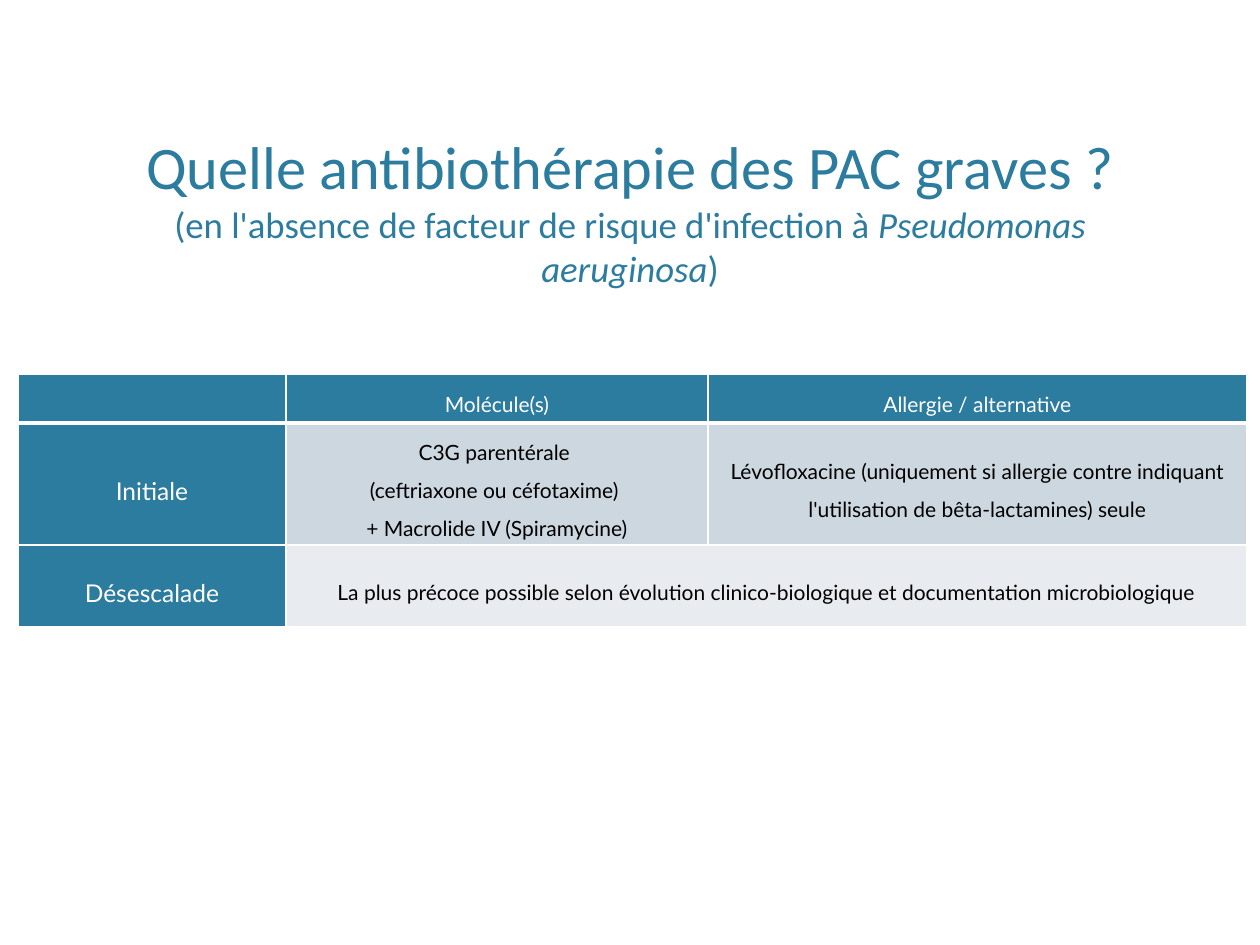
from dataclasses import dataclass

from lxml import etree
from pptx import Presentation
from pptx.dml.color import RGBColor
from pptx.enum import text
from pptx.oxml import ns
from pptx.util import Emu, Pt

PX = 914400 // 126


@dataclass(frozen=True)
class Theme:
    teal: str = "2C7C9F"
    white: str = "FFFFFF"
    black: str = "000000"
    band_dark: str = "CDD7DF"
    band_light: str = "E8ECF0"
    title_font: str = "Calibri"
    table_font: str = "Lato"
    title_size: float = 34.5
    subtitle_size: float = 21
    label_size: float = 14
    body_size: float = 12
    border: float = 1
    header_border: float = 3


THEME = Theme()

COLUMN_WIDTHS = (268, 422, 539)
ROW_HEIGHTS = (49, 122, 82)
ROW_FILLS = (THEME.teal, THEME.band_dark, THEME.band_light)
CELL_LINES = (
    ((), ("Molécule(s)",), ("Allergie / alternative",)),
    (
        ("Initiale",),
        ("C3G parentérale ", "(ceftriaxone ou céfotaxime) ", "+ Macrolide IV (Spiramycine)"),
        ("Lévofloxacine (uniquement si allergie contre indiquant l'utilisation de bêta-lactamines) seule",),
    ),
    (
        ("Désescalade",),
        ("La plus précoce possible selon évolution clinico-biologique et documentation microbiologique",),
        (),
    ),
)


def px(length):
    return Emu(length * PX)


def style_font(font, name, size, color):
    font.name = name
    font.size = Pt(size)
    font.color.rgb = RGBColor.from_string(color)


def add_title(slide):
    shape = slide.shapes.add_textbox(px(76), px(158), px(1108), px(138))
    frame = shape.text_frame
    frame.word_wrap = True
    frame.vertical_anchor = text.MSO_ANCHOR.BOTTOM
    frame.margin_left = frame.margin_right = px(14)
    paragraph = frame.paragraphs[0]
    paragraph.alignment = text.PP_ALIGN.CENTER

    def add_run(words, size, italic=False):
        run = paragraph.add_run()
        run.text = words
        style_font(run.font, THEME.title_font, size, THEME.teal)
        run.font.italic = italic

    add_run("Quelle antibiothérapie des PAC graves ?", THEME.title_size)
    paragraph.add_line_break()
    add_run("(en l'absence de facteur de risque d'infection à ", THEME.subtitle_size)
    add_run("Pseudomonas aeruginosa", THEME.subtitle_size, italic=True)
    add_run(")", THEME.subtitle_size)


def set_borders(cell, bottom_width):
    properties = cell._tc.get_or_add_tcPr()
    widths = {"a:lnL": THEME.border, "a:lnR": THEME.border, "a:lnT": THEME.border, "a:lnB": bottom_width}
    for tag, width in widths.items():
        line = etree.SubElement(properties, ns.qn(tag), w=str(Pt(width)))
        fill = etree.SubElement(line, ns.qn("a:solidFill"))
        etree.SubElement(fill, ns.qn("a:srgbClr"), val=THEME.white)


def fill_cell(cell, lines, fill, size, color, bottom_width):
    set_borders(cell, bottom_width)
    cell.fill.solid()
    cell.fill.fore_color.rgb = RGBColor.from_string(fill)
    cell.vertical_anchor = text.MSO_ANCHOR.MIDDLE
    cell.margin_left = cell.margin_right = px(8)
    cell.margin_top = cell.margin_bottom = 0
    if not lines:
        return
    cell.text_frame.text = "\n".join(lines)
    for paragraph in cell.text_frame.paragraphs:
        paragraph.alignment = text.PP_ALIGN.CENTER
        paragraph.line_spacing = 1.5
        style_font(paragraph.font, THEME.table_font, size, color)


def add_treatment_table(slide):
    table = slide.shapes.add_table(
        len(ROW_HEIGHTS), len(COLUMN_WIDTHS),
        px(18), px(374), px(sum(COLUMN_WIDTHS)), px(sum(ROW_HEIGHTS)),
    ).table
    table.first_row = False
    table.horz_banding = False
    for column, width in zip(table.columns, COLUMN_WIDTHS):
        column.width = px(width)
    for row, height in zip(table.rows, ROW_HEIGHTS):
        row.height = px(height)
    table.cell(2, 1).merge(table.cell(2, 2))
    for row_index, row_lines in enumerate(CELL_LINES):
        is_header = row_index == 0
        bottom_width = THEME.header_border if is_header else THEME.border
        for column_index, lines in enumerate(row_lines):
            is_label = column_index == 0
            fill_cell(
                table.cell(row_index, column_index),
                lines,
                THEME.teal if is_label else ROW_FILLS[row_index],
                THEME.label_size if is_label else THEME.body_size,
                THEME.white if is_header or is_label else THEME.black,
                bottom_width,
            )


def main():
    presentation = Presentation()
    presentation.slide_width = px(1260)
    presentation.slide_height = px(945)
    slide = presentation.slides.add_slide(presentation.slide_layouts[6])
    add_title(slide)
    add_treatment_table(slide)
    presentation.save("out.pptx")


if __name__ == "__main__":
    main()
